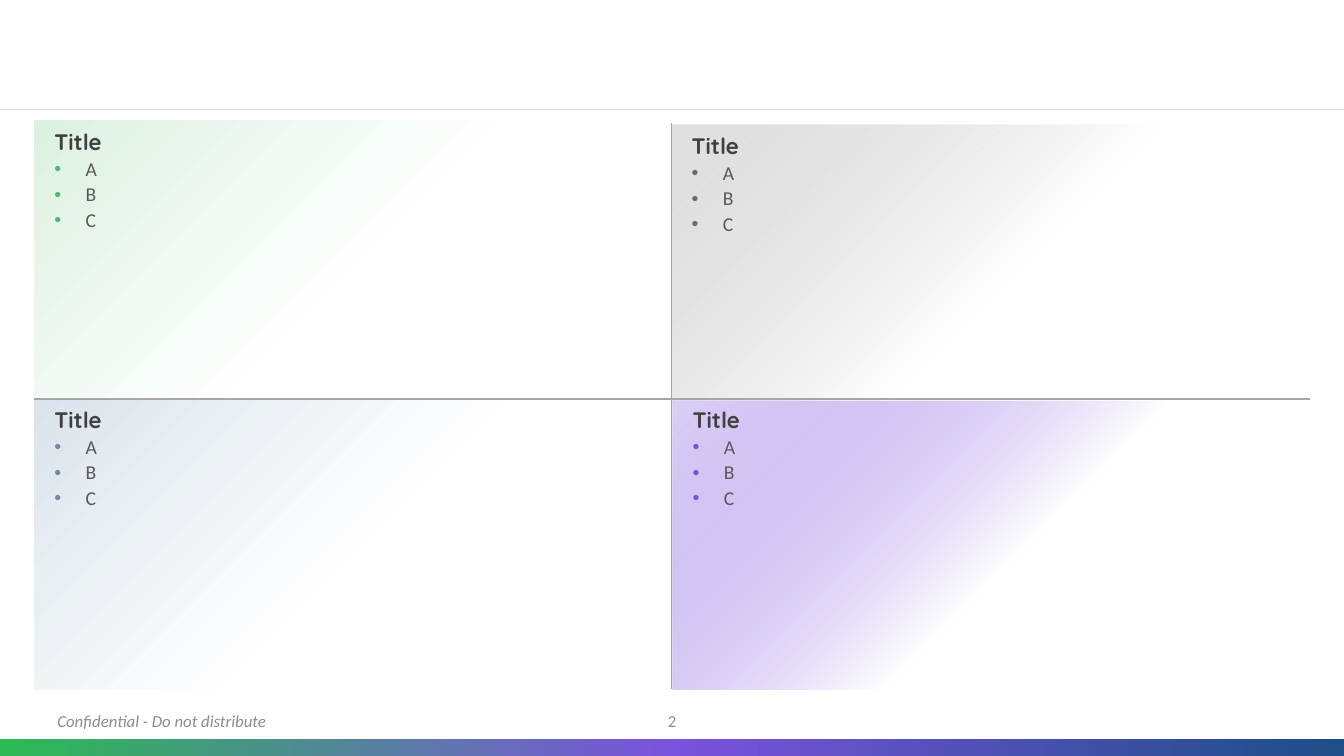
from dataclasses import dataclass

from lxml import etree
from pptx import Presentation
from pptx.dml.color import RGBColor
from pptx.enum.shapes import MSO_CONNECTOR, MSO_SHAPE
from pptx.enum.text import MSO_ANCHOR, MSO_AUTO_SIZE, PP_ALIGN
from pptx.oxml.ns import qn
from pptx.util import Inches, Pt

STRAIGHT = MSO_CONNECTOR.STRAIGHT
RECTANGLE = MSO_SHAPE.RECTANGLE
TOP, MIDDLE = MSO_ANCHOR.TOP, MSO_ANCHOR.MIDDLE
NO_FIT = MSO_AUTO_SIZE.NONE
LEFT, CENTER = PP_ALIGN.LEFT, PP_ALIGN.CENTER


@dataclass(frozen=True)
class Theme:
    heading_font: str = "Quicksand"
    body_font: str = "Calibri"
    heading_size: int = 16
    body_size: int = 14
    footer_size: int = 12
    heading: str = "404040"
    body: str = "595959"
    footer: str = "8C8C8C"
    white: str = "FFFFFF"
    header_rule: str = "D9D9D9"
    divider: str = "A6A6A6"
    bar: tuple = ("2BBA53", "7A52DD", "1D4E87")


THEME = Theme()
SLIDE_W, SLIDE_H = 13.33, 7.5
COMPARISON_LAYOUT = 4  # its four body placeholders hold the four quadrants
ITEMS = ("A", "B", "C")
PANEL_W, TOP_H, BOTTOM_H = 6.32, 2.73, 2.88
LEFT_X, RIGHT_X, MID_Y = 0.34, 6.66, 3.96

# Box, corner colour, corner opacity in percent, bullet colour, columns
QUADRANTS = (
    ((LEFT_X, 1.2, PANEL_W, TOP_H), "DCF1E2", 100, "51BA6F", 2),
    ((LEFT_X, MID_Y, PANEL_W, BOTTOM_H), "DBE4EB", 100, "6B8EAC", 1),
    ((RIGHT_X + 0.01, MID_Y, PANEL_W, BOTTOM_H), "7A52DD", 26, "7A52DD", 1),
    ((RIGHT_X, 1.24, PANEL_W, TOP_H), "BFBFBF", 48, "6C6C6C", 1),
)


def add_element(parent, tag, **attributes):
    element = etree.SubElement(parent, qn(tag))
    for name, value in attributes.items():
        element.set(name, str(value))
    return element


def fill_gradient(shape, stops, from_corner=False):
    """Fill with (position, colour, opacity) stops, all in percent."""
    gradient = add_element(shape._element.spPr, "a:gradFill", rotWithShape=1)
    stop_list = add_element(gradient, "a:gsLst")
    for position, colour, opacity in stops:
        stop = add_element(stop_list, "a:gs", pos=position * 1000)
        rgb = add_element(stop, "a:srgbClr", val=colour)
        if opacity < 100:
            add_element(rgb, "a:alpha", val=opacity * 1000)
    if from_corner:
        radial = add_element(gradient, "a:path", path="circle")
        add_element(radial, "a:fillToRect", r=100000, b=100000)
    else:
        add_element(gradient, "a:lin", ang=0, scaled=0)


def write(paragraph, text, *, size, colour, font=THEME.body_font, bold=False,
          italic=False, align=LEFT, before=0, line_spacing=None, bullet=None):
    properties = paragraph._p.get_or_add_pPr()
    indent = Inches(0.31) if bullet else 0
    properties.set("marL", str(indent))
    properties.set("indent", str(-indent))
    if bullet:
        add_element(add_element(properties, "a:buClr"), "a:srgbClr", val=bullet)
        add_element(properties, "a:buFont", typeface="Arial")
        add_element(properties, "a:buChar", char="•")
    else:
        add_element(properties, "a:buNone")
    paragraph.alignment = align
    paragraph.space_before = Pt(before)
    paragraph.line_spacing = line_spacing
    run = paragraph.add_run()
    run.text = text
    run.font.name, run.font.size = font, Pt(size)
    run.font.bold, run.font.italic = bold, italic
    run.font.color.rgb = RGBColor.from_string(colour)


def add_rule(slide, start, end, colour, width):
    rule = slide.shapes.add_connector(STRAIGHT, *map(Inches, start + end))
    rule.line.color.rgb = RGBColor.from_string(colour)
    rule.line.width = Pt(width)
    add_element(rule._element.spPr, "a:effectLst")


def fill_quadrant(panel, box, corner, opacity, bullet, columns):
    panel.left, panel.top, panel.width, panel.height = map(Inches, box)
    fill_gradient(panel, ((0, corner, opacity), (54, THEME.white, 100)), True)
    frame = panel.text_frame
    frame.word_wrap, frame.auto_size = True, NO_FIT
    frame.vertical_anchor = TOP
    frame.margin_left = frame.margin_right = Inches(0.2)
    frame.margin_top, frame.margin_bottom = Inches(0.1), Inches(0.05)
    if columns > 1:
        body = frame._txBody.bodyPr
        body.set("numCol", str(columns))
        body.set("spcCol", str(Inches(0.1)))
    write(frame.paragraphs[0], "Title", size=THEME.heading_size,
          colour=THEME.heading, font=THEME.heading_font, bold=True,
          line_spacing=0.9)
    for item in ITEMS:
        write(frame.add_paragraph(), item, size=THEME.body_size,
              colour=THEME.body, before=3, line_spacing=0.9, bullet=bullet)


def add_footer_text(slide, box, text, **style):
    frame = slide.shapes.add_textbox(*map(Inches, box)).text_frame
    frame.word_wrap, frame.vertical_anchor = True, MIDDLE
    write(frame.paragraphs[0], text, size=THEME.footer_size,
          colour=THEME.footer, **style)


def add_footer(slide, left, top, width, height):
    bar_height, text_height = 0.17, 0.4
    bar = slide.shapes.add_shape(
        RECTANGLE, Inches(left), Inches(top + height - bar_height),
        Inches(width), Inches(bar_height))
    fill_gradient(bar, [(50 * i, colour, 100) for i, colour in enumerate(THEME.bar)])
    bar.line.fill.background()
    bar.shadow.inherit = False
    number_width = 0.78
    add_footer_text(slide, (left + (width - number_width) / 2, top,
                            number_width, text_height), "2", align=CENTER)
    add_footer_text(slide, (left + 0.47, top, 4.5, text_height),
                    "Confidential - Do not distribute", italic=True)


def main():
    prs = Presentation()
    prs.slide_width, prs.slide_height = Inches(SLIDE_W), Inches(SLIDE_H)
    slide = prs.slides.add_slide(prs.slide_layouts[COMPARISON_LAYOUT])

    # The header stays empty above its rule
    heading = slide.shapes.title._element
    heading.getparent().remove(heading)
    add_rule(slide, (0, 1.09), (SLIDE_W, 1.09), THEME.header_rule, 0.5)

    # Four quadrants
    for panel, quadrant in zip(slide.placeholders, QUADRANTS):
        fill_quadrant(panel, *quadrant)

    # Dividers between the quadrants
    add_rule(slide, (LEFT_X, MID_Y), (12.99, MID_Y), THEME.divider, 1)
    add_rule(slide, (RIGHT_X, 1.22), (RIGHT_X, MID_Y + BOTTOM_H), THEME.divider, 1)

    # Footer
    add_footer(slide, 0, 6.95, SLIDE_W, SLIDE_H - 6.95)
    prs.save("out.pptx")


if __name__ == "__main__":
    main()
